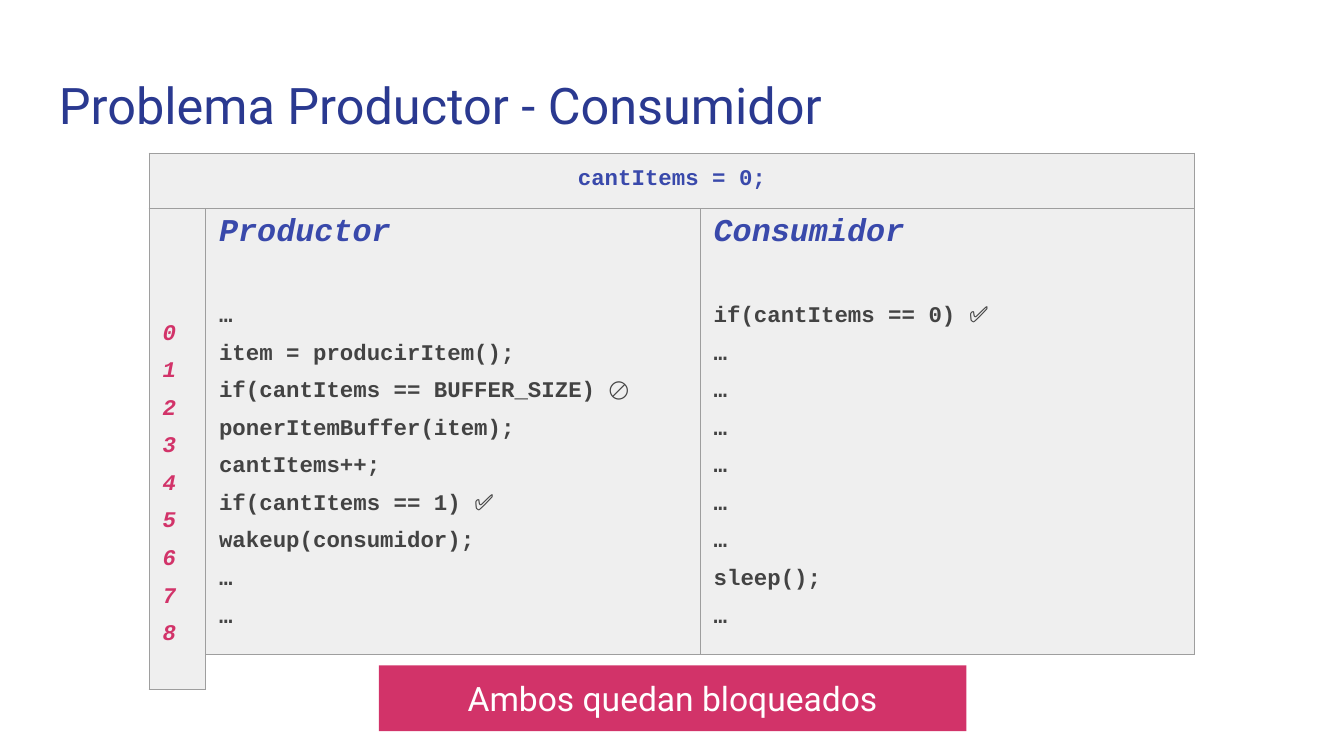
from dataclasses import dataclass

from lxml import etree
from pptx import Presentation
from pptx.dml.color import RGBColor
from pptx.enum import shapes, text
from pptx.oxml import ns
from pptx.util import Inches, Pt


@dataclass(frozen=True)
class Theme:
    title_color: str = "2A3990"
    heading_color: str = "3949AB"
    code_color: str = "434343"
    accent: str = "D23369"
    white: str = "FFFFFF"
    panel: str = "EFEFEF"
    border: str = "9E9E9E"
    sans: str = "Roboto"
    mono: str = "Courier New"
    title_size: float = 27
    banner_size: float = 18
    heading_size: float = 17
    code_size: float = 12
    inset: float = 0.1
    tight: float = 0.6
    gap: float = 12


THEME = Theme()
PRODUCER = ["…", "item = producirItem();", "if(cantItems == BUFFER_SIZE) 🚫",
            "ponerItemBuffer(item);", "cantItems++;", "if(cantItems == 1) ✅",
            "wakeup(consumidor);", "…", "…"]
CONSUMER = ["if(cantItems == 0) ✅", *["…"] * 6, "sleep();", "…"]


def write(frame, content, font=THEME.mono, size=THEME.code_size,
          color=THEME.code_color, bold=False, italic=False, align=None,
          line=None, before=None, after=None):
    """Fill the first paragraph of the frame, or append one if it is used."""
    paragraph = frame.paragraphs[0]
    if paragraph.runs:
        paragraph = frame.add_paragraph()
    paragraph.alignment = align
    paragraph.line_spacing = line
    if before is not None:
        paragraph.space_before = Pt(before)
    if after is not None:
        paragraph.space_after = Pt(after)
    run = paragraph.add_run()
    run.text = content
    run.font.name = font
    run.font.size = Pt(size)
    run.font.bold = bold
    run.font.italic = italic
    run.font.color.rgb = RGBColor.from_string(color)


def set_insets(holder):
    holder.margin_left = holder.margin_right = Inches(THEME.inset)
    holder.margin_top = holder.margin_bottom = Inches(THEME.inset)
    holder.vertical_anchor = text.MSO_ANCHOR.MIDDLE


def outline(cell):
    properties = cell._tc.get_or_add_tcPr()
    for index, side in enumerate(("lnL", "lnR", "lnT", "lnB")):
        edge = etree.Element(ns.qn(f"a:{side}"), w=str(Pt(0.75)))
        fill = etree.SubElement(edge, ns.qn("a:solidFill"))
        etree.SubElement(fill, ns.qn("a:srgbClr"), val=THEME.border)
        properties.insert(index, edge)


def add_panel(slide, left, top, width, height):
    """One-cell table with a grey fill and a thin border."""
    table = slide.shapes.add_table(
        1, 1, Inches(left), Inches(top), Inches(width), Inches(height)).table
    table.first_row = table.horz_banding = False
    cell = table.cell(0, 0)
    set_insets(cell)
    cell.fill.solid()
    cell.fill.fore_color.rgb = RGBColor.from_string(THEME.panel)
    outline(cell)
    cell.text_frame.word_wrap = True
    return cell


def add_title(slide, left, top, width, height):
    frame = slide.shapes.add_textbox(
        Inches(left), Inches(top), Inches(width), Inches(height)).text_frame
    frame.word_wrap = True
    set_insets(frame)
    write(frame, "Problema Productor - Consumidor", font=THEME.sans,
          size=THEME.title_size, color=THEME.title_color)


def add_shared_state(slide, left, top, width, height):
    cell = add_panel(slide, left, top, width, height)
    write(cell.text_frame, "cantItems = 0;", color=THEME.heading_color,
          bold=True, align=text.PP_ALIGN.CENTER, line=THEME.tight,
          after=THEME.gap)


def add_process(slide, left, top, width, height, heading, code):
    cell = add_panel(slide, left, top, width, height)
    cell.vertical_anchor = text.MSO_ANCHOR.TOP
    write(cell.text_frame, heading, size=THEME.heading_size,
          color=THEME.heading_color, bold=True, italic=True, line=0.7)
    for step, statement in enumerate(code):
        # The first statement stands apart from the heading
        write(cell.text_frame, statement, bold=True, line=THEME.tight,
              before=THEME.gap if step else 34)


def add_step_numbers(slide, left, top, width, height, count):
    cell = add_panel(slide, left, top, width, height)
    cell.margin_top = Inches(0.65)
    for step in range(count):
        write(cell.text_frame, str(step), color=THEME.accent, bold=True,
              italic=True, line=THEME.tight,
              before=THEME.gap if step else 0,
              after=THEME.gap if step == count - 1 else None)


def add_banner(slide, left, top, width, height):
    banner = slide.shapes.add_shape(
        shapes.MSO_SHAPE.RECTANGLE,
        Inches(left), Inches(top), Inches(width), Inches(height))
    banner.shadow.inherit = False
    banner.fill.solid()
    banner.fill.fore_color.rgb = RGBColor.from_string(THEME.accent)
    banner.line.fill.background()
    set_insets(banner.text_frame)
    banner.text_frame.word_wrap = True
    write(banner.text_frame, "Ambos quedan bloqueados", font=THEME.sans,
          size=THEME.banner_size, color=THEME.white,
          align=text.PP_ALIGN.CENTER)


def main():
    deck = Presentation()
    # Widescreen, 16:9
    deck.slide_width, deck.slide_height = Inches(10), Inches(10 * 9 / 16)
    slide = deck.slides.add_slide(deck.slide_layouts[6])

    # Column grid: step numbers, then two equal processes
    left, top = 1.11, 1.55
    number_width, process_width = 0.42, 3.68

    add_title(slide, 0.34, 0.45, 9.32, 0.66)
    for column, (heading, code) in enumerate(
            [("Productor", PRODUCER), ("Consumidor", CONSUMER)]):
        add_process(slide, left + number_width + column * process_width, top,
                    process_width, 3.32, heading, code)
    add_step_numbers(slide, left, top, number_width, 3.58, len(PRODUCER))
    add_banner(slide, 2.82, 4.95, 4.37, 0.49)
    add_shared_state(slide, left, 1.14, number_width + 2 * process_width, 0.41)

    deck.save("out.pptx")


if __name__ == "__main__":
    main()
